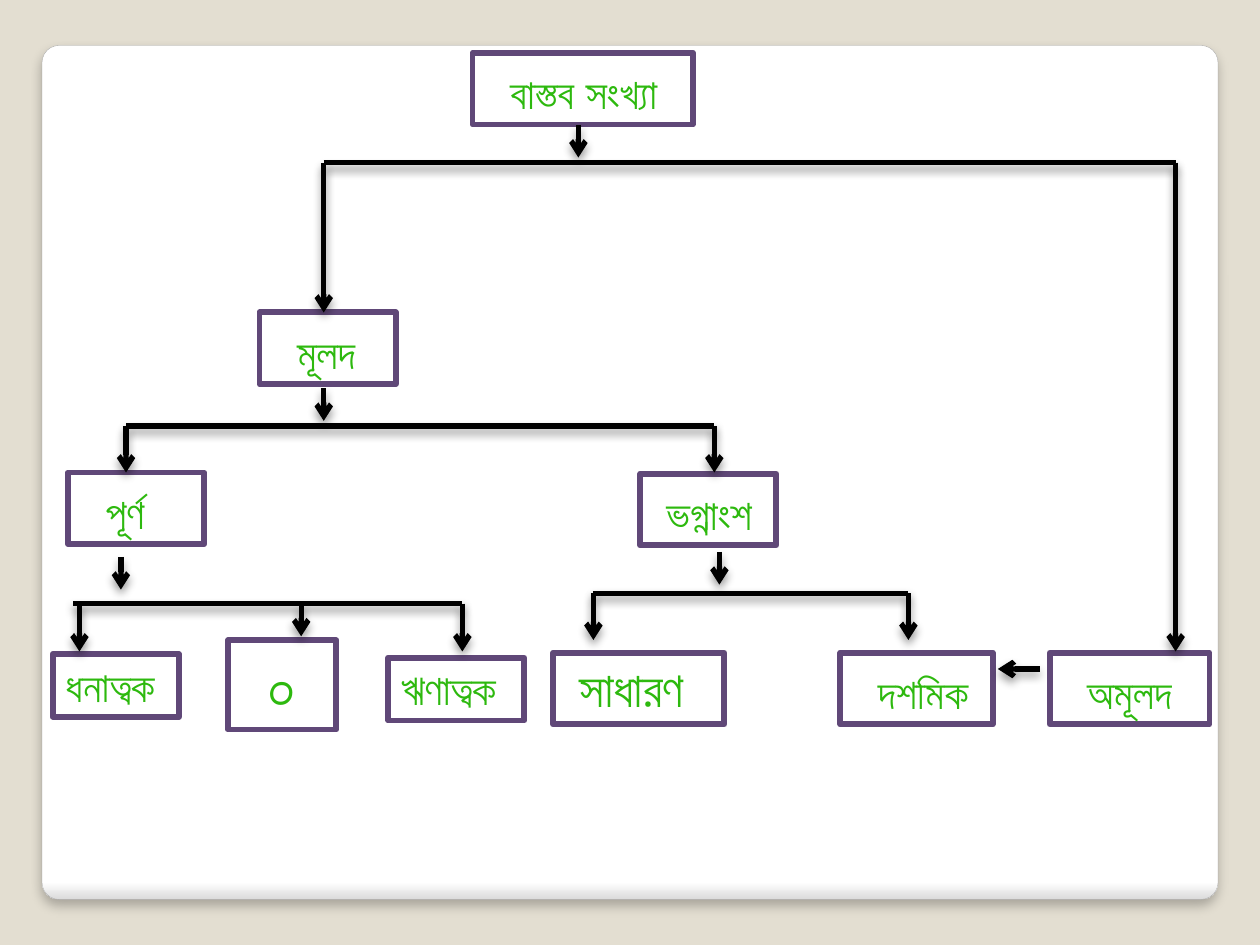
from lxml import etree
from pptx import Presentation
from pptx.dml.color import RGBColor
from pptx.enum.shapes import MSO_CONNECTOR, MSO_SHAPE
from pptx.enum.text import MSO_ANCHOR, PP_ALIGN
from pptx.oxml.ns import qn
from pptx.util import Pt

RECTANGLE = MSO_SHAPE.RECTANGLE
ROUNDED_RECTANGLE = MSO_SHAPE.ROUNDED_RECTANGLE
STRAIGHT = MSO_CONNECTOR.STRAIGHT
TOP = MSO_ANCHOR.TOP
LEFT = PP_ALIGN.LEFT
CENTER = PP_ALIGN.CENTER

BACKGROUND = RGBColor(0xE3, 0xDE, 0xD1)
WHITE = RGBColor(0xFF, 0xFF, 0xFF)
PANEL_EDGE = RGBColor(0xDA, 0xDA, 0xDA)
PANEL_LINE = RGBColor(0xA4, 0xA4, 0xA4)
PURPLE = RGBColor(0x60, 0x48, 0x78)
GREEN = RGBColor(0x2D, 0xB9, 0x0E)
BLACK = RGBColor(0x00, 0x00, 0x00)

FONT = "Arial"
STEM_LENGTH = 18.7
INDENTED = {"indent": 14.3, "drop": 5}

NODES = [
    ("বাস্তব সংখ্যা", (270, 30.2, 126, 41), INDENTED),
    ("মূলদ", (148.3, 178.5, 77.8, 41), INDENTED),
    ("অমূলদ", (599.8, 373, 91.4, 41), INDENTED),
    ("পূর্ণ", (38.9, 270, 77.8, 41), INDENTED),
    ("ভগ্নাংশ", (365.8, 270.7, 77.8, 41), {"indent": 7.8, "drop": 5}),
    ("ধনাত্বক", (30.2, 373.7, 72, 36), {}),
    ("০", (130.3, 365.8, 61.9, 51.1), {"size": 36, "alignment": CENTER}),
    ("ঋণাত্বক", (221.8, 375.8, 77.8, 36), {}),
    ("সাধারণ", (316.1, 373, 97.9, 41), {"size": 28, "indent": 7.8}),
    ("দশমিক", (480.2, 373, 87.1, 41), INDENTED),
]

BRANCHES = [
    ((185, 92.9, 486.8), (145.5, -21.6), [(0, 85.7), (486.8, 279.4)]),
    ((72, 243.4, 336.2), (113, -21.6), [(0, 26.6), (336.2, 26.6)]),
    ((41.8, 344.9, 222.4), (27.3, -26.7), [(3.6, 27.4), (130.3, 18.7), (222.4, 27.4)]),
    ((339.1, 339.1, 180), (72, -23.7), [(0, 26.6), (180, 26.6)]),
]


def add_shadow(properties, opacity, blur, distance):
    effects = properties.find(qn("a:effectLst"))
    if effects is None:
        effects = etree.SubElement(properties, qn("a:effectLst"))
    shadow = etree.SubElement(
        effects, qn("a:outerShdw"), blurRad=str(Pt(blur)),
        dist=str(Pt(distance)), dir="5400000", rotWithShape="0")
    color = etree.SubElement(shadow, qn("a:srgbClr"), val="000000")
    etree.SubElement(color, qn("a:alpha"), val=str(opacity * 1000))


def add_line(slide, start, end, arrow=True):
    connector = slide.shapes.add_connector(
        STRAIGHT, *(Pt(value) for value in (*start, *end)))
    connector.line.color.rgb = BLACK
    connector.line.width = Pt(3)
    properties = connector._element.spPr
    if arrow:
        etree.SubElement(properties.find(qn("a:ln")), qn("a:tailEnd"), type="arrow")
    add_shadow(properties, 40, 5.2, 3)


def write_text(shape, text, size=24, indent=0, drop=0, alignment=LEFT):
    frame = shape.text_frame
    frame.word_wrap = True
    frame.vertical_anchor = TOP
    frame.margin_left = Pt(7.2 + indent)
    frame.margin_right = Pt(7.2)
    frame.margin_top = Pt(3.6 + drop)
    frame.margin_bottom = Pt(3.6)
    paragraph = frame.paragraphs[0]
    paragraph.alignment = alignment
    run = paragraph.add_run()
    run.text = text
    font = run.font
    font.name = FONT
    font.size = Pt(size)
    font.bold = True
    font.color.rgb = GREEN
    etree.SubElement(run._r.get_or_add_rPr(), qn("a:cs"), typeface=FONT)


def draw_panel(slide, left, top, width, height):
    panel = slide.shapes.add_shape(
        ROUNDED_RECTANGLE, Pt(left), Pt(top), Pt(width), Pt(height))
    panel.adjustments[0] = 0.02
    panel.fill.gradient()
    panel.fill.gradient_angle = 270
    for stop, position, color in zip(
            panel.fill.gradient_stops, (0.98, 1), (WHITE, PANEL_EDGE)):
        stop.position = position
        stop.color.rgb = color
    panel.line.color.rgb = PANEL_LINE
    panel.line.width = Pt(0.16)
    panel.shadow.inherit = False
    add_shadow(panel._element.spPr, 25, 6, 4)


def draw_node(slide, text, box, text_format):
    node = slide.shapes.add_shape(RECTANGLE, *(Pt(value) for value in box))
    node.fill.solid()
    node.fill.fore_color.rgb = WHITE
    node.line.color.rgb = PURPLE
    node.line.width = Pt(3.35)
    node.shadow.inherit = False
    write_text(node, text, **text_format)


def draw_branch(slide, bar, stem, drops):
    left, top, width = bar
    stem_x, stem_y = left + stem[0], top + stem[1]
    add_line(slide, (stem_x, stem_y), (stem_x, stem_y + STEM_LENGTH))
    add_line(slide, (left, top), (left + width, top), arrow=False)
    for offset, length in drops:
        add_line(slide, (left + offset, top), (left + offset, top + length))


def main():
    presentation = Presentation()
    presentation.slide_width = Pt(720)
    presentation.slide_height = Pt(540)
    slide = presentation.slides.add_slide(presentation.slide_layouts[6])
    slide.background.fill.solid()
    slide.background.fill.fore_color.rgb = BACKGROUND
    draw_panel(slide, 24, 26, 672, 488)
    for text, box, text_format in NODES:
        draw_node(slide, text, box, text_format)
    for bar, stem, drops in BRANCHES:
        draw_branch(slide, bar, stem, drops)
    add_line(slide, (594, 382.3), (570.2, 382.3))
    presentation.save("out.pptx")


if __name__ == "__main__":
    main()
